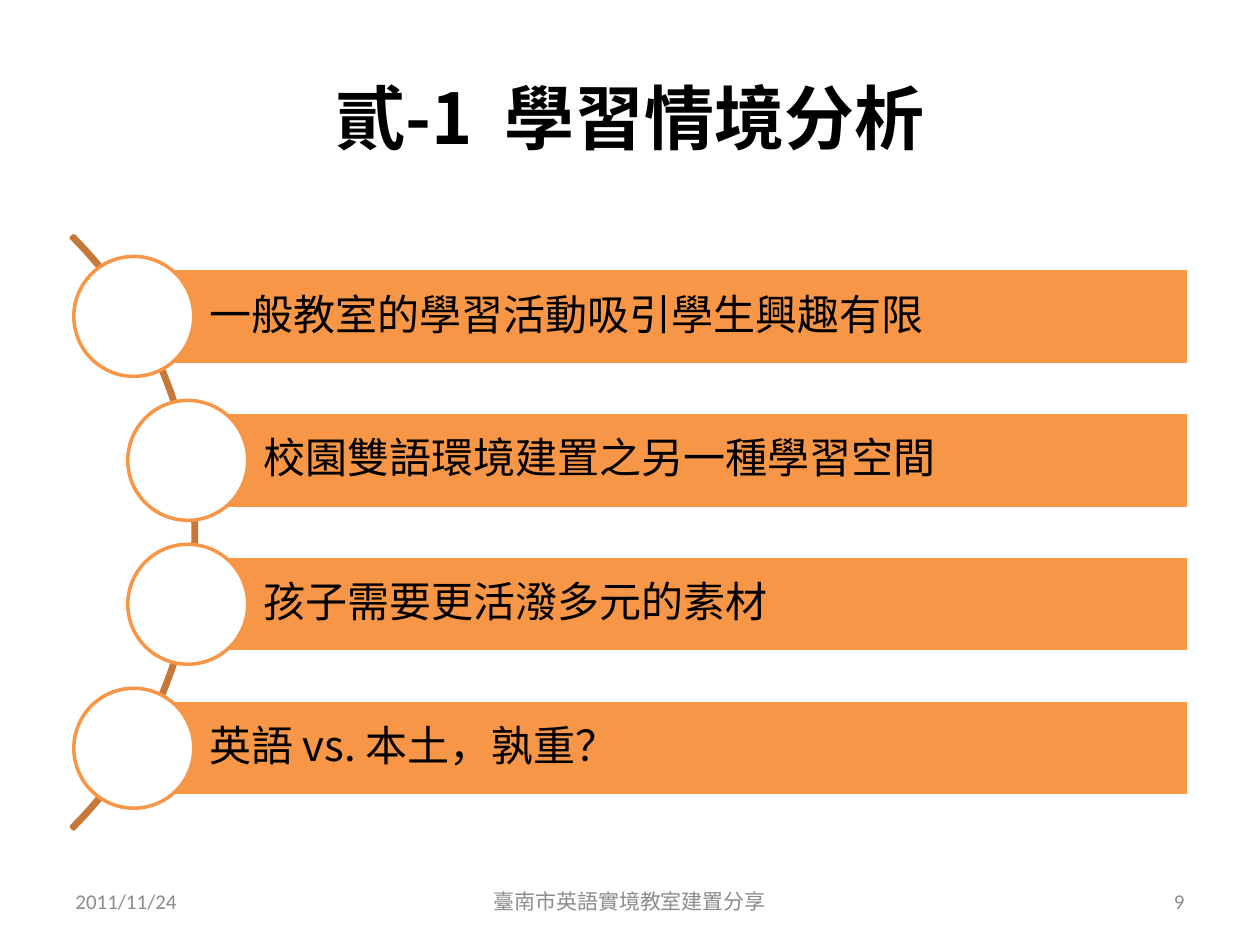
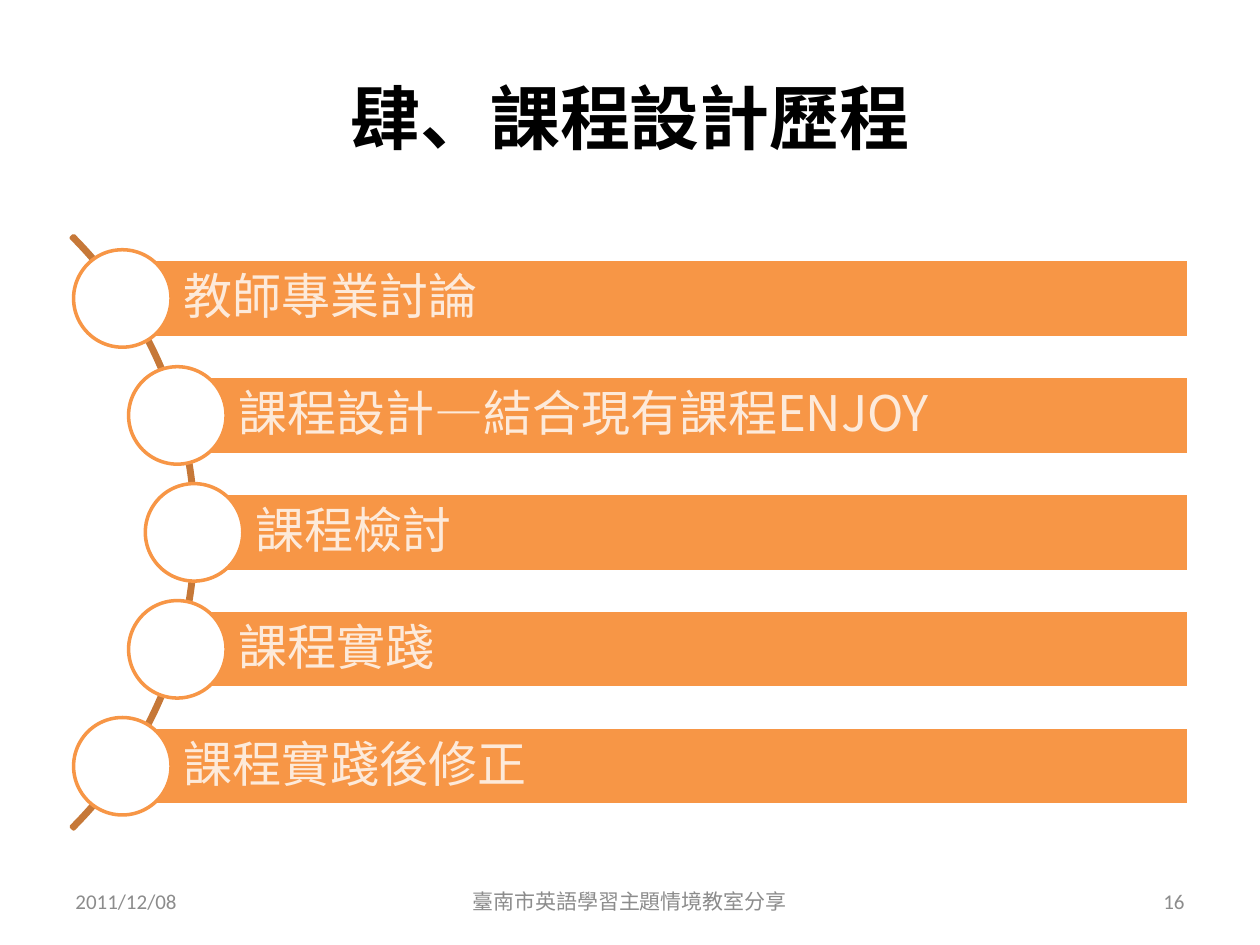
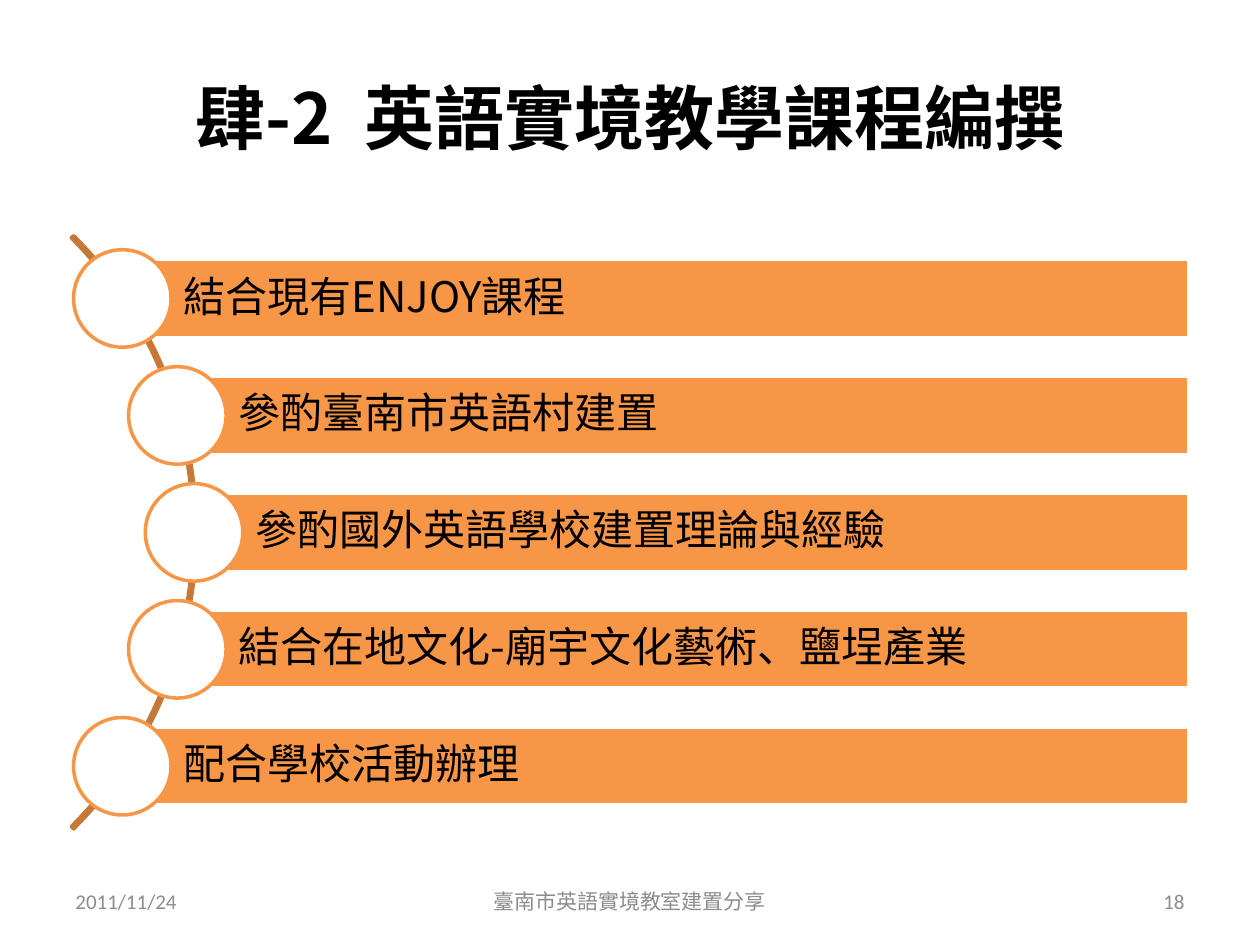
import math

import pptx
import pptx.dml.color
import pptx.enum.shapes
import pptx.enum.text
import pptx.oxml.ns
import pptx.util
from lxml import etree

COLORS = {
    "title": "000000",
    "bar": "F79646",
    "arc": "C67838",
    "paper": "FFFFFF",
    "dark": "000000",
    "pale": "FDEADA",
    "footer": "8C8C8C",
}
CJK = "Noto Sans CJK SC"
LATIN = "Calibri"
SHAPE = pptx.enum.shapes.MSO_SHAPE
ALIGN = pptx.enum.text.PP_ALIGN
COLUMNS, ROWS = 20, 15

SLIDES = [
    {
        "title": "貳-1  學習情境分析",
        "items": [
            "一般教室的學習活動吸引學生興趣有限",
            "校園雙語環境建置之另一種學習空間",
            "孩子需要更活潑多元的素材",
            "英語 vs. 本土，孰重？",
        ],
        "size": 24,
        "color": "dark",
        "footer": ("2011/11/24", "臺南市英語實境教室建置分享", "9"),
    },
    {
        "title": "肆、課程設計歷程",
        "items": [
            "教師專業討論",
            "課程設計—結合現有課程ENJOY",
            "課程檢討",
            "課程實踐",
            "課程實踐後修正",
        ],
        "size": 28,
        "color": "pale",
        "footer": ("2011/12/08", "臺南市英語學習主題情境教室分享", "16"),
    },
    {
        "title": "肆-2  英語實境教學課程編撰",
        "items": [
            "結合現有ENJOY課程",
            "參酌臺南市英語村建置",
            "參酌國外英語學校建置理論與經驗",
            "結合在地文化-廟宇文化藝術、鹽埕產業",
            "配合學校活動辦理",
        ],
        "size": 24,
        "color": "dark",
        "footer": ("2011/11/24", "臺南市英語實境教室建置分享", "18"),
    },
]


def rgb(name):
    return pptx.dml.color.RGBColor.from_string(COLORS[name])


def write(tf, text, size, color, font=CJK, bold=False, align=ALIGN.LEFT, spacing=None):
    tf.word_wrap = True
    tf.vertical_anchor = pptx.enum.text.MSO_ANCHOR.MIDDLE
    p = tf.paragraphs[0]
    p.alignment = align
    p.line_spacing = spacing
    r = p.add_run()
    r.text = text
    r.font.size = pptx.util.Pt(size)
    r.font.bold = bold
    r.font.color.rgb = rgb(color)
    r.font.name = font
    ea = etree.SubElement(r.font._element, pptx.oxml.ns.qn("a:ea"))
    ea.set("typeface", CJK)


class Deck:
    arc_x, arc_y, arc_radius = -3.54, 8.45, 6.66
    dot_track = 6.62
    list_height = 9.9
    bar_right = 18.87

    def __init__(self, prs):
        self.prs = prs
        self.s = None

    def box(self, x, y, w, h):
        cell_w = self.prs.slide_width / COLUMNS
        cell_h = self.prs.slide_height / ROWS
        return [round(v) for v in (x * cell_w, y * cell_h, w * cell_w, h * cell_h)]

    def add_slide(self):
        self.s = self.prs.slides.add_slide(self.prs.slide_layouts[5])

    def title(self, text):
        sp = self.s.shapes.title
        sp.left, sp.top, sp.width, sp.height = self.box(1, 0.6, 18, 2.5)
        write(sp.text_frame, text, 40, "title", bold=True, align=ALIGN.CENTER)

    def shape(self, kind, x, y, w, h, line, fill=None):
        sp = self.s.shapes.add_shape(kind, *self.box(x, y, w, h))
        sp.shadow.inherit = False
        if fill:
            sp.fill.solid()
            sp.fill.fore_color.rgb = rgb(fill)
        else:
            sp.fill.background()
        sp.line.color.rgb = rgb(line)
        sp.line.width = pptx.util.Pt(2)
        return sp

    def circle(self, kind, x, y, radius, line, fill=None):
        return self.shape(kind, x - radius, y - radius, 2 * radius, 2 * radius, line, fill)

    def arc(self):
        sp = self.circle(SHAPE.BLOCK_ARC, self.arc_x, self.arc_y, self.arc_radius, "arc")
        for i, value in enumerate((189, 27, 0.004)):
            sp.adjustments[i] = value

    def bar(self, text, x, y, height, size, color):
        sp = self.shape(SHAPE.RECTANGLE, x, y - height / 2, self.bar_right - x, height, "paper", "bar")
        tf = sp.text_frame
        tf.margin_right = tf.margin_top = tf.margin_bottom = pptx.util.Pt(size * 0.2)
        tf.margin_left = round(sp.height * 0.79)
        write(tf, text, size, color, spacing=0.9)

    def curved_list(self, items, size, color):
        self.arc()
        height = self.list_height / (1.5 * len(items) + 0.5)
        for i, text in enumerate(items):
            dy = (i - (len(items) - 1) / 2) * 1.5 * height
            x = self.arc_x + math.sqrt(self.dot_track ** 2 - dy ** 2)
            y = self.arc_y + dy
            self.bar(text, x, y, height, size, color)
            self.circle(SHAPE.OVAL, x, y, height * 0.625, "bar", "paper")

    def footer(self, texts):
        places = ((1, 4.67, ALIGN.LEFT), (6.83, 6.33, ALIGN.CENTER), (14.33, 4.67, ALIGN.RIGHT))
        for text, (x, w, align) in zip(texts, places):
            sp = self.s.shapes.add_textbox(*self.box(x, 13.9, w, 0.8))
            write(sp.text_frame, text, 12, "footer", font=LATIN, align=align)


def main():
    prs = pptx.Presentation()
    prs.slide_width = pptx.util.Inches(10)
    prs.slide_height = pptx.util.Inches(7.5)
    deck = Deck(prs)
    for content in SLIDES:
        deck.add_slide()
        deck.title(content["title"])
        deck.curved_list(content["items"], content["size"], content["color"])
        deck.footer(content["footer"])
    prs.save("out.pptx")


if __name__ == "__main__":
    main()
